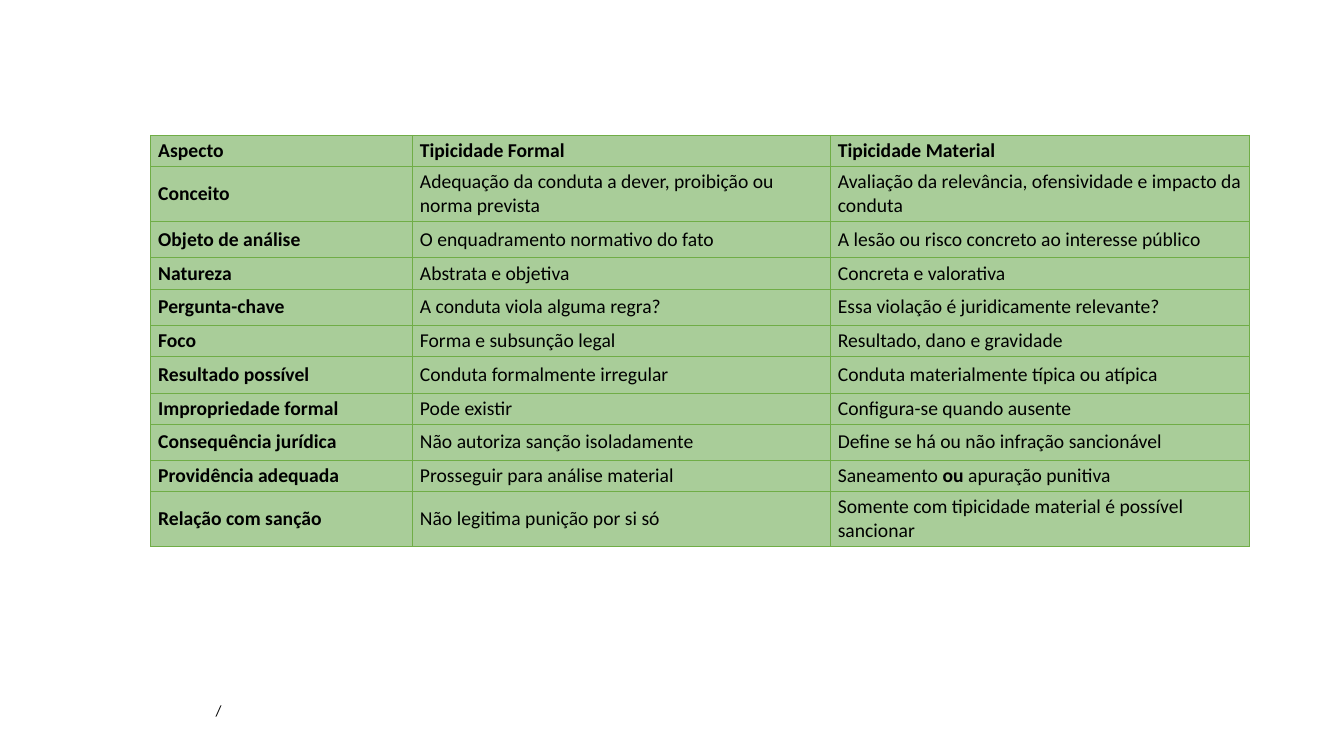
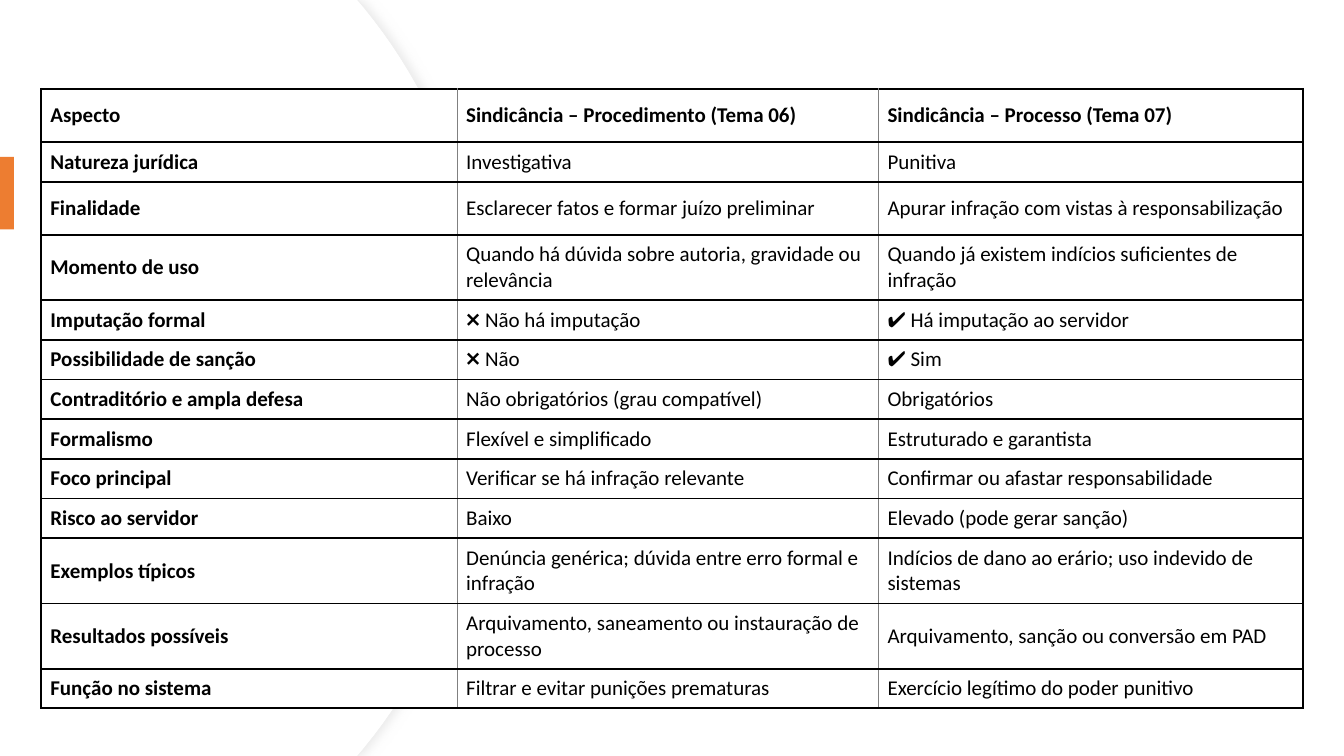
from lxml import etree
from pptx import Presentation
from pptx.dml.color import RGBColor
from pptx.enum.shapes import MSO_SHAPE
from pptx.enum.text import MSO_ANCHOR
from pptx.oxml.ns import qn
from pptx.util import Pt

RECTANGLE = MSO_SHAPE.RECTANGLE
MIDDLE = MSO_ANCHOR.MIDDLE

BLACK, WHITE, GREY = "000000", "FFFFFF", "808080"
GREEN, PALE_GREEN, ORANGE = "70AD47", "A9CD99", "ED7D31"
OUTLINE, SHADOW = "EFEFEF", "D9D9D9"

TYPICITY_ROWS = [
    ("Aspecto", "Tipicidade Formal", "Tipicidade Material"),
    ("Conceito", "Adequação da conduta a dever, proibição ou norma prevista",
     "Avaliação da relevância, ofensividade e impacto da conduta"),
    ("Objeto de análise", "O enquadramento normativo do fato",
     "A lesão ou risco concreto ao interesse público"),
    ("Natureza", "Abstrata e objetiva", "Concreta e valorativa"),
    ("Pergunta-chave", "A conduta viola alguma regra?",
     "Essa violação é juridicamente relevante?"),
    ("Foco", "Forma e subsunção legal", "Resultado, dano e gravidade"),
    ("Resultado possível", "Conduta formalmente irregular",
     "Conduta materialmente típica ou atípica"),
    ("Impropriedade formal", "Pode existir", "Configura-se quando ausente"),
    ("Consequência jurídica", "Não autoriza sanção isoladamente",
     "Define se há ou não infração sancionável"),
    ("Providência adequada", "Prosseguir para análise material",
     "Saneamento *ou* apuração punitiva"),
    ("Relação com sanção", "Não legitima punição por si só",
     "Somente com tipicidade material é possível sancionar"),
]

INQUIRY_ROWS = [
    ("Aspecto", "Sindicância – Procedimento (Tema 06)",
     "Sindicância – Processo (Tema 07)"),
    ("Natureza jurídica", "Investigativa", "Punitiva"),
    ("Finalidade", "Esclarecer fatos e formar juízo preliminar",
     "Apurar infração com vistas à responsabilização"),
    ("Momento de uso", "Quando há dúvida sobre autoria, gravidade ou relevância",
     "Quando já existem indícios suficientes de infração"),
    ("Imputação formal", "❌ Não há imputação", "✔️ Há imputação ao servidor"),
    ("Possibilidade de sanção", "❌ Não", "✔️ Sim"),
    ("Contraditório e ampla defesa", "Não obrigatórios (grau compatível)",
     "Obrigatórios"),
    ("Formalismo", "Flexível e simplificado", "Estruturado e garantista"),
    ("Foco principal", "Verificar se há infração relevante",
     "Confirmar ou afastar responsabilidade"),
    ("Risco ao servidor", "Baixo", "Elevado (pode gerar sanção)"),
    ("Exemplos típicos", "Denúncia genérica; dúvida entre erro formal e infração",
     "Indícios de dano ao erário; uso indevido de sistemas"),
    ("Resultados possíveis", "Arquivamento, saneamento ou instauração de processo",
     "Arquivamento, sanção ou conversão em PAD"),
    ("Função no sistema", "Filtrar e evitar punições prematuras",
     "Exercício legítimo do poder punitivo"),
]


def rgb(color):
    return RGBColor.from_string(color)


def bezier(start, control_1, control_2, end, steps=24):
    for step in range(1, steps + 1):
        t = step / steps
        weights = ((1 - t) ** 3, 3 * t * (1 - t) ** 2, 3 * t * t * (1 - t), t ** 3)
        yield tuple(
            sum(w * value for w, value in zip(weights, axis))
            for axis in zip(start, control_1, control_2, end)
        )


class Deck:
    font_name = "Calibri"

    def __init__(self):
        self.presentation = Presentation()
        self.presentation.slide_width = Pt(960)
        self.presentation.slide_height = Pt(540)
        self.slide = None

    def add_slide(self):
        self.slide = self.presentation.slides.add_slide(
            self.presentation.slide_layouts[6])

    def fill_paragraph(self, paragraph, text, size, bold=False):
        parts = text.split("*")
        for index, part in enumerate(parts):
            run = paragraph.add_run()
            run.text = part
            if len(parts) > 1:
                run.font.bold = index % 2 == 1
        font = paragraph.font
        font.name, font.size = self.font_name, Pt(size)
        font.color.rgb = rgb(BLACK)
        if len(parts) == 1:
            font.bold = bold

    def text(self, left, top, width, height, text, size):
        frame = self.slide.shapes.add_textbox(
            Pt(left), Pt(top), Pt(width), Pt(height)).text_frame
        frame.word_wrap = True
        self.fill_paragraph(frame.paragraphs[0], text, size)

    def paint(self, shape, fill, line=None):
        shape.shadow.inherit = False
        shape.fill.solid()
        shape.fill.fore_color.rgb = rgb(fill)
        if line:
            shape.line.color.rgb = rgb(line)
            shape.line.width = Pt(0.75)
        else:
            shape.line.fill.background()

    def rectangle(self, left, top, width, height, fill):
        self.paint(self.slide.shapes.add_shape(
            RECTANGLE, Pt(left), Pt(top), Pt(width), Pt(height)), fill)

    def curved_panel(self, right, line=None, shadow=None):
        shoulder, bulge = right - 90, right - 34.5
        points = [(right - 95, 0), (shoulder, 6)]
        points += bezier((shoulder, 6), (bulge, 73.5), (right, 167), (right, 270))
        points += [(x, 540 - y) for x, y in reversed(points[:-1])]
        points.append((0, 540))
        builder = self.slide.shapes.build_freeform(0, 0)
        builder.add_line_segments([(Pt(x), Pt(y)) for x, y in points], close=True)
        panel = builder.convert_to_shape()
        self.paint(panel, WHITE, line)
        if shadow:
            effects = panel._element.spPr.find(qn("a:effectLst"))
            outer = etree.SubElement(
                effects, qn("a:outerShdw"), blurRad=str(Pt(7)), dist=str(Pt(3)),
                dir="0", algn="l", rotWithShape="0")
            tint = etree.SubElement(outer, qn("a:srgbClr"), val=shadow)
            etree.SubElement(tint, qn("a:alpha"), val="50000")

    def border(self, cell, side, color, width):
        line = etree.SubElement(
            cell._tc.get_or_add_tcPr(), qn(f"a:ln{side}"), w=str(Pt(width)))
        fill = etree.SubElement(line, qn("a:solidFill"))
        etree.SubElement(fill, qn("a:srgbClr"), val=color)

    def table(self, left, top, widths, heights, rows, size, margins, fill,
              outer, inner):
        table = self.slide.shapes.add_table(
            len(rows), len(widths), Pt(left), Pt(top),
            Pt(sum(widths)), Pt(sum(heights))).table
        table.first_row = table.horz_banding = False
        for column, width in zip(table.columns, widths):
            column.width = Pt(width)
        for row, height in zip(table.rows, heights):
            row.height = Pt(height)
        last = len(widths) - 1
        for r, texts in enumerate(rows):
            for c, text in enumerate(texts):
                cell = table.cell(r, c)
                (cell.margin_left, cell.margin_top,
                 cell.margin_right, cell.margin_bottom) = map(Pt, margins)
                cell.vertical_anchor = MIDDLE
                self.border(cell, "L", *(outer if c == 0 else inner))
                self.border(cell, "R", *(outer if c == last else inner))
                self.border(cell, "T", *outer)
                self.border(cell, "B", *outer)
                cell.fill.solid()
                cell.fill.fore_color.rgb = rgb(fill)
                self.fill_paragraph(cell.text_frame.paragraphs[0], text, size,
                                    bold=r == 0 or c == 0)


def main():
    deck = Deck()

    deck.add_slide()
    deck.text(147, 497, 666, 21, "/", 11)
    short, regular, double = 22.3, 26, 39.3
    deck.table(
        107.5, 96.5, (187, 298.5, 299.5),
        [short, double] + [regular, short] * 4 + [double],
        TYPICITY_ROWS, 14, (5.5, 2.5, 5.5, 2.5), PALE_GREEN,
        outer=(GREEN, 0.5), inner=(GREEN, 0.5))

    deck.add_slide()
    deck.curved_panel(350.5, line=OUTLINE, shadow=SHADOW)
    deck.curved_panel(350)
    deck.rectangle(0, 112, 10, 52, ORANGE)
    short, regular, double = 28.35, 38, 46.6
    deck.table(
        29.5, 63.5, (297, 301, 303.5),
        [regular, short, regular, double] + [short] * 6 + [double] * 2 + [short],
        INQUIRY_ROWS, 15, (6.5, 5, 3.5, 5), WHITE,
        outer=(BLACK, 1.5), inner=(GREY, 0.5))

    deck.presentation.save("out.pptx")


if __name__ == "__main__":
    main()
